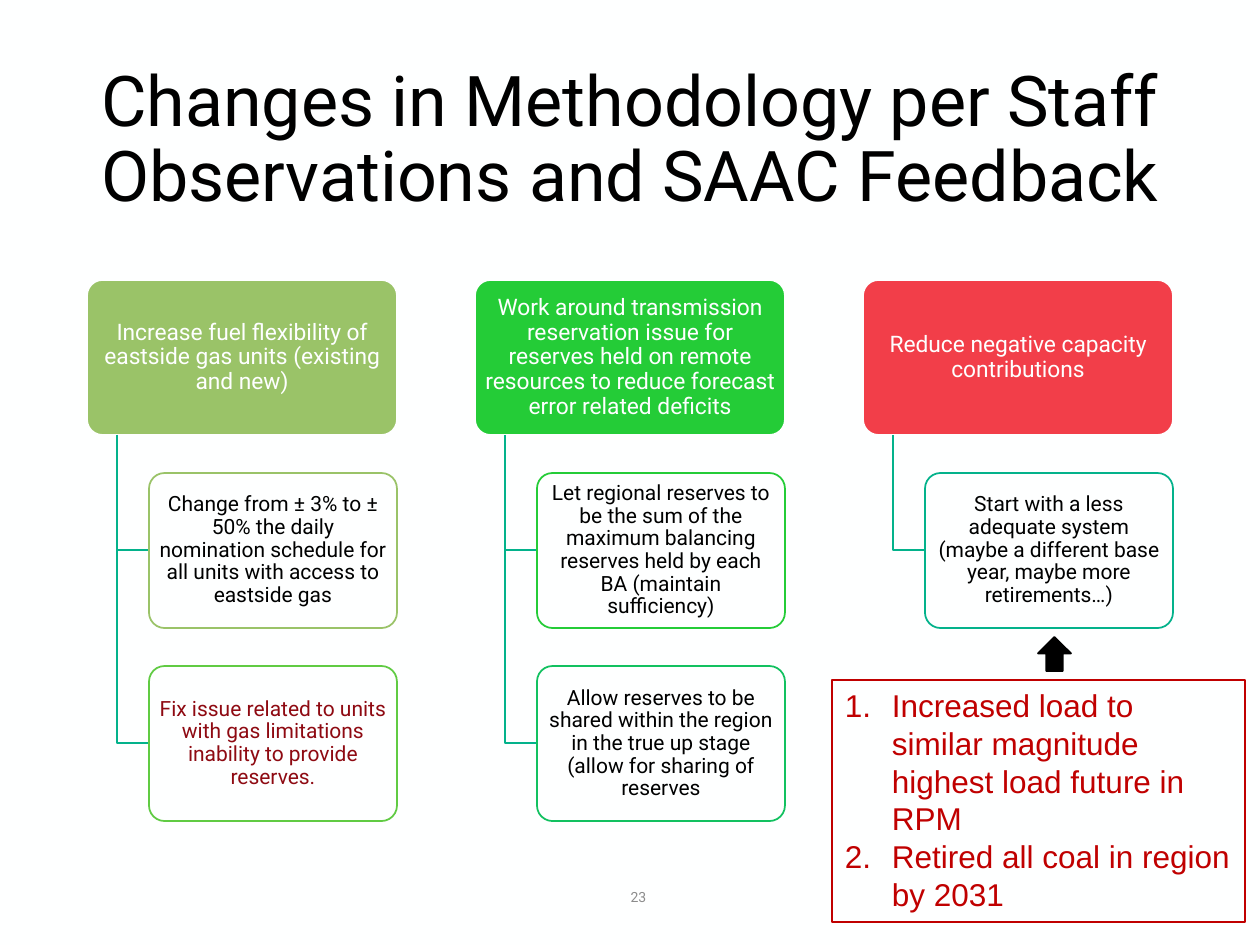
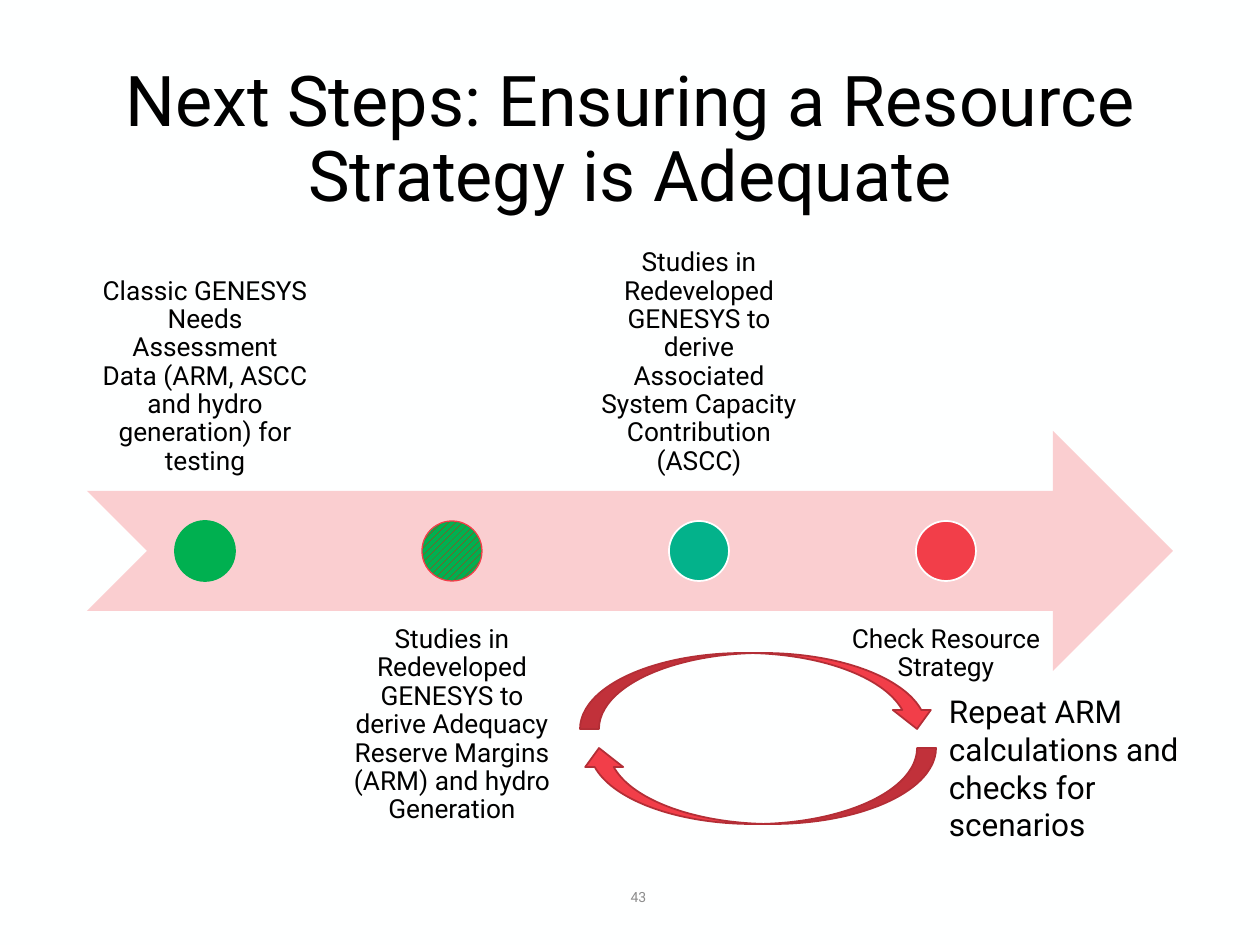
from lxml import etree
from pptx import Presentation
from pptx.dml.color import RGBColor
from pptx.enum.dml import MSO_PATTERN
from pptx.enum.shapes import MSO_SHAPE as SHAPE
from pptx.enum.text import MSO_ANCHOR as ANCHOR, PP_ALIGN as ALIGN
from pptx.oxml.ns import qn
from pptx.util import Pt

PX = 914400 / 126
PAGE_SIZE = (1260, 945)
COLORS = {
    "paper": "FEFFFF", "ink": "000000", "muted": "8C8C8C", "teal": "03B28B",
    "olive": "9AC368", "lime": "60CB43", "green": "24CC37", "emerald": "12C160",
    "red": "F23E49", "dark_red": "B32E36", "maroon": "8E0A12", "note": "C00000",
    "pink": "FACED0", "done": "00B050", "stripe": "FF0000",
}
TITLE_BOX = (87, 50, 1086, 183)
NUMBER_BOX = (602, 872, 73, 50)
DEFAULT_INSETS = (13, 6)

TITLE = {"size": 40, "color": "ink", "spacing": 0.9}
NUMBER = {"size": 8, "color": "muted"}
HEAD = {"size": 13, "color": "paper", "spacing": 0.9, "insets": (4, 3)}
DETAIL = {"size": 12, "color": "ink", "spacing": 0.9, "insets": (4, 3)}
STEP = {"size": 15, "color": "ink", "spacing": 0.9, "insets": (15, 15)}
NOTE = {"size": 18, "color": "note", "font": "Arial", "align": ALIGN.LEFT, "anchor": ANCHOR.TOP}
REMARK = {"size": 18, "color": "ink", "align": ALIGN.LEFT, "anchor": ANCHOR.TOP}

# Each column: heading, heading colour, details as (text, outline, text colour)
CHANGES = [
    ("Increase fuel flexibility of eastside gas units (existing and new)", "olive", [
        ("Change from ± 3% to ± 50% the daily nomination schedule for all units "
         "with access to eastside gas", "olive", "ink"),
        ("Fix issue related to units with gas limitations inability to provide reserves.",
         "lime", "maroon")]),
    ("Work around transmission reservation issue for reserves held on remote resources "
     "to reduce forecast error related deficits", "green", [
        ("Let regional reserves to be the sum of the maximum balancing reserves held by "
         "each BA (maintain sufficiency)", "green", "ink"),
        ("Allow reserves to be shared within the region in the true up stage (allow for "
         "sharing of reserves", "emerald", "ink")]),
    ("Reduce negative capacity contributions", "red", [
        ("Start with a less adequate system (maybe a different base year, maybe more "
         "retirements…)", "teal", "ink")]),
]
LOAD_NOTES = ["Increased load to similar magnitude highest load future in RPM",
              "Retired all coal in region by 2031"]

# Each step: text, dot fill, dot outline, outline width
STEPS = [
    ("Classic GENESYS Needs Assessment Data (ARM, ASCC and hydro generation) for testing",
     "done", "done", 1),
    ("Studies in Redeveloped GENESYS to derive Adequacy Reserve Margins (ARM) and hydro "
     "Generation", "striped", "red", 0.75),
    ("Studies in Redeveloped GENESYS to derive Associated System Capacity Contribution (ASCC)",
     "teal", "paper", 1),
    ("Check Resource Strategy", "red", "paper", 1),
]


def emu(*lengths):
    return [round(length * PX) for length in lengths]


def rgb(name):
    return RGBColor.from_string(COLORS[name])


def paint(fill, name):
    if name == "striped":
        fill.patterned()
        fill.pattern = MSO_PATTERN.WIDE_UPWARD_DIAGONAL
        fill.fore_color.rgb, fill.back_color.rgb = rgb("stripe"), rgb("done")
    else:
        fill.solid()
        fill.fore_color.rgb = rgb(name)


def outline(shape, name, width):
    if name:
        shape.line.color.rgb = rgb(name)
        shape.line.width = Pt(width)
    else:
        shape.line.fill.background()


def add_figure(page, kind, box, fill, line=None, width=1.0):
    shape = page.shapes.add_shape(kind, *emu(*box))
    shape.shadow.inherit = False
    paint(shape.fill, fill)
    outline(shape, line, width)
    return shape


def number_paragraph(para):
    """Give the paragraph an automatic number with a hanging indent."""
    props = para._p.get_or_add_pPr()
    indent, = emu(47)
    props.set("marL", str(indent))
    props.set("indent", str(-indent))
    etree.SubElement(props, qn("a:buFont"), typeface="+mj-lt")
    etree.SubElement(props, qn("a:buAutoNum"), type="arabicPeriod")


def write(shape, texts, style, numbered=False):
    frame = shape.text_frame
    side, edge = emu(*style.get("insets", DEFAULT_INSETS))
    settings = {"word_wrap": True, "margin_left": side, "margin_right": side,
                "margin_top": edge, "margin_bottom": edge,
                "vertical_anchor": style.get("anchor", ANCHOR.MIDDLE)}
    for name, value in settings.items():
        setattr(frame, name, value)
    for index, text in enumerate(texts):
        para = frame.add_paragraph() if index else frame.paragraphs[0]
        para.alignment = style.get("align", ALIGN.CENTER)
        para.line_spacing = style.get("spacing", 1.0)
        if numbered:
            number_paragraph(para)
        span = para.add_run()
        span.text = text
        span.font.name = style.get("font", "Roboto")
        span.font.size = Pt(style["size"])
        span.font.color.rgb = rgb(style["color"])


def add_label(page, box, text, style):
    write(page.shapes.add_textbox(*emu(*box)), [text], style)


def start_page(deck, title, number):
    page = deck.slides.add_slide(deck.slide_layouts[6])
    paint(page.background.fill, "paper")
    add_label(page, TITLE_BOX, title, TITLE)
    add_label(page, NUMBER_BOX, number, NUMBER)
    return page


def add_elbow(page, start, end):
    """Draw a line down from start, then right to end."""
    builder = page.shapes.build_freeform(*emu(*start), scale=1.0)
    builder.add_line_segments([emu(start[0], end[1]), emu(*end)], close=False)
    elbow = builder.convert_to_shape()
    elbow.shadow.inherit = False
    elbow.fill.background()
    outline(elbow, "teal", 1)


def add_card(page, box, text, style, fill, line):
    card = add_figure(page, SHAPE.ROUNDED_RECTANGLE, box, fill, line)
    card.adjustments[0] = 0.1
    write(card, [text], style)


def change_column(page, box, heading, color, details):
    left, top, width, height = box
    pitch, trunk, indent = height * 5 // 4, 30, 62
    add_card(page, box, heading, HEAD, color, "paper")
    for row, (text, line, ink) in enumerate(details, start=1):
        card_top = top + row * pitch
        add_elbow(page, (left + trunk, top + height), (left + indent, card_top + height // 2))
        add_card(page, (left + indent, card_top, width - indent, height), text,
                 {**DETAIL, "color": ink}, "paper", line)


def load_note(page, box):
    left, top, width, height = box
    note = add_figure(page, SHAPE.RECTANGLE, box, "paper", "note", 0.75)
    write(note, LOAD_NOTES, NOTE, numbered=True)
    add_figure(page, SHAPE.UP_ARROW, (left + width // 2, top - 43, 33, 34), "ink", "ink")


def timeline(page, box):
    left, top, width, height = box
    pitch, label_width, dot = 247, 236, 60
    add_figure(page, SHAPE.NOTCHED_RIGHT_ARROW, box, "pink")
    for index, (text, fill, line, line_width) in enumerate(STEPS):
        step_left = left + index * pitch
        above = index % 2 == 0
        label_top = top - height * 3 // 4 if above else top + height * 3 // 4
        anchor = ANCHOR.BOTTOM if above else ANCHOR.TOP
        add_label(page, (step_left, label_top, label_width, height), text,
                  {**STEP, "anchor": anchor})
        dot_box = (step_left + (label_width - dot) // 2, top + (height - dot) // 2, dot, dot)
        add_figure(page, SHAPE.OVAL, dot_box, fill, line, line_width)


def repeat_loop(page, box):
    """Two curved arrows that circle between the steps, with a remark at the right."""
    left, top, width, height = box
    arrow_height = 76
    for arrow_top, turn in ((top + height - arrow_height, 180), (top, 0)):
        arrow = add_figure(page, SHAPE.CURVED_DOWN_ARROW,
                           (left, arrow_top, width, arrow_height), "red", "dark_red")
        arrow.rotation = turn
    add_label(page, (left + width, top + 33, 315, 127),
              "Repeat ARM calculations and checks for scenarios", REMARK)


def methodology_page(deck):
    page = start_page(deck, "Changes in Methodology per Staff Observations and SAAC Feedback", "23")
    for index, (heading, color, details) in enumerate(CHANGES):
        change_column(page, (87 + index * 388, 280, 310, 155), heading, color, details)
    load_note(page, (832, 680, 413, 242))


def next_steps_page(deck):
    page = start_page(deck, "Next Steps: Ensuring a Resource Strategy is Adequate", "43")
    timeline(page, (87, 431, 1086, 240))
    repeat_loop(page, (580, 653, 356, 171))


def main():
    deck = Presentation()
    deck.slide_width, deck.slide_height = emu(*PAGE_SIZE)
    methodology_page(deck)
    next_steps_page(deck)
    deck.save("out.pptx")


if __name__ == "__main__":
    main()
